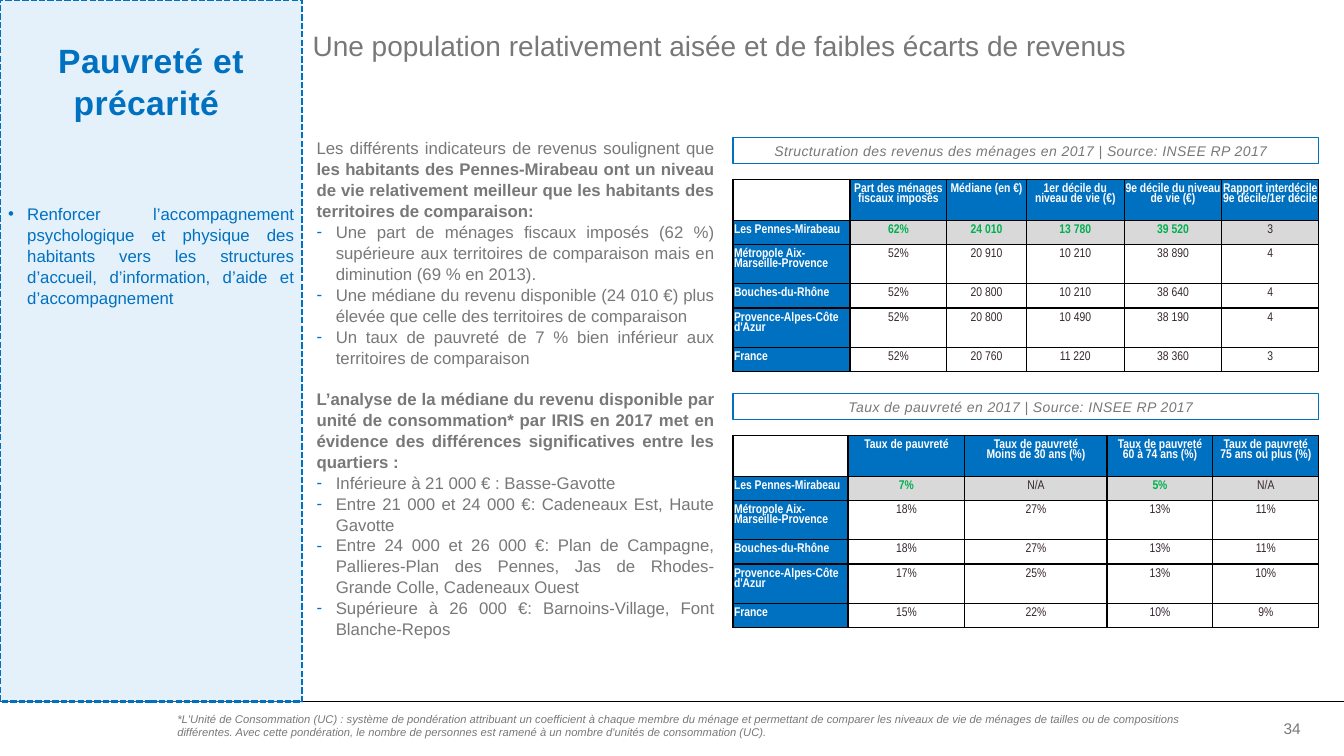
from lxml import etree
from pptx import Presentation
from pptx import util as u
from pptx.dml.color import RGBColor
from pptx.enum import dml, shapes, text
from pptx.oxml import ns

BLUE = RGBColor(0x00, 0x70, 0xC0)
BULLET_BLUE = RGBColor(0x00, 0x70, 0xCD)
PALE_BLUE = RGBColor(0xE4, 0xF1, 0xFB)
GREY = RGBColor(0x77, 0x78, 0x77)
LIGHT_GREY = RGBColor(0xD9, 0xD9, 0xD9)
DARK = RGBColor(0x36, 0x27, 0x31)
GREEN = RGBColor(0x00, 0xB0, 0x50)
WHITE = RGBColor(0xFF, 0xFF, 0xFF)
BLACK = RGBColor(0x00, 0x00, 0x00)
LEFT, CENTER, RIGHT, JUSTIFY = (text.PP_ALIGN.LEFT, text.PP_ALIGN.CENTER,
                                text.PP_ALIGN.RIGHT, text.PP_ALIGN.JUSTIFY)
ROW_HEIGHTS = [0.39, 0.24] * 3
BODY_SPACING = 1.04

INCOME_INTRO = [
    ("Les différents indicateurs de revenus soulignent que ", False),
    ("les habitants des Pennes-Mirabeau ont un niveau de vie relativement meilleur "
     "que les habitants des territoires de comparaison:", True)]
INCOME_POINTS = [
    "Une part de ménages fiscaux imposés (62 %) supérieure aux territoires de "
    "comparaison mais en diminution (69 % en 2013).",
    "Une médiane du revenu disponible (24 010 €) plus élevée que celle des "
    "territoires de comparaison",
    "Un taux de pauvreté de 7 % bien inférieur aux territoires de comparaison"]
DISTRICT_INTRO = [
    ("L’analyse de la médiane du revenu disponible par unité de consommation* par "
     "IRIS en 2017 met en évidence des différences significatives entre les "
     "quartiers :", True)]
DISTRICT_POINTS = [
    "Inférieure à 21 000 € : Basse-Gavotte",
    "Entre 21 000 et 24 000 €: Cadeneaux Est, Haute Gavotte",
    "Entre 24 000 et 26 000 €: Plan de Campagne, Pallieres-Plan des Pennes, "
    "Jas de Rhodes-Grande Colle, Cadeneaux Ouest",
    "Supérieure à 26 000 €: Barnoins-Village, Font Blanche-Repos"]
PANEL_POINT = ("Renforcer l’accompagnement psychologique et physique des habitants vers "
               "les structures d’accueil, d’information, d’aide et d’accompagnement")
FOOTNOTE = ("*L'Unité de Consommation (UC) : système de pondération attribuant un "
            "coefficient à chaque membre du ménage et permettant de comparer les niveaux "
            "de vie de ménages de tailles ou de compositions différentes. Avec cette "
            "pondération, le nombre de personnes est ramené à un nombre d'unités de "
            "consommation (UC).")
INCOME_ROWS = [
    ["", "Part des ménages fiscaux imposés", "Médiane (en €)",
     "1er décile du niveau de vie (€)", "9e décile du niveau de vie (€)",
     "Rapport interdécile 9e décile/1er décile"],
    ["Les Pennes-Mirabeau", "62%", "24 010", "13 780", "39 520", "3"],
    ["Métropole Aix-Marseille-Provence", "52%", "20 910", "10 210", "38 890", "4"],
    ["Bouches-du-Rhône", "52%", "20 800", "10 210", "38 640", "4"],
    ["Provence-Alpes-Côte d'Azur", "52%", "20 800", "10 490", "38 190", "4"],
    ["France", "52%", "20 760", "11 220", "38 360", "3"]]
POVERTY_ROWS = [
    ["", "Taux de pauvreté", "Taux de pauvreté\vMoins de 30 ans (%)",
     "Taux de pauvreté\v60 à 74 ans (%)", "Taux de pauvreté\v75 ans ou plus (%)"],
    ["Les Pennes-Mirabeau", "7%", "N/A", "5%", "N/A"],
    ["Métropole Aix-Marseille-Provence", "18%", "27%", "13%", "11%"],
    ["Bouches-du-Rhône", "18%", "27%", "13%", "11%"],
    ["Provence-Alpes-Côte d'Azur", "17%", "25%", "13%", "10%"],
    ["France", "15%", "22%", "10%", "9%"]]


def inches(*values):
    return [u.Inches(value) for value in values]


def set_frame(frame, insets, anchor=text.MSO_ANCHOR.TOP):
    frame.word_wrap = True
    frame.auto_size = text.MSO_AUTO_SIZE.NONE
    frame.vertical_anchor = anchor
    (frame.margin_left, frame.margin_top,
     frame.margin_right, frame.margin_bottom) = inches(*insets)


def add_run(paragraph, words, size, color, bold=False, italic=False,
            font="Arial", tracking=0):
    for index, line in enumerate(words.split("\v")):
        if index:
            paragraph.add_line_break()
        run = paragraph.add_run()
        run.text = line
        run.font.name, run.font.size = font, u.Pt(size)
        run.font.bold, run.font.italic = bold, italic
        run.font.color.rgb = color
        if tracking:
            run._r.get_or_add_rPr().set("spc", str(tracking))


def add_bullet(paragraph, mark, color):
    properties = paragraph._p.get_or_add_pPr()
    indent = u.Inches(0.19)
    properties.set("marL", str(indent))
    properties.set("indent", str(-indent))
    bullet_color = etree.SubElement(properties, ns.qn("a:buClr"))
    etree.SubElement(bullet_color, ns.qn("a:srgbClr")).set("val", str(color))
    etree.SubElement(properties, ns.qn("a:buFont")).set("typeface", "Arial")
    etree.SubElement(properties, ns.qn("a:buChar")).set("char", mark)


def add_box(slide, box, fill=None, line_width=0.75):
    shape = slide.shapes.add_shape(shapes.MSO_SHAPE.RECTANGLE, *inches(*box))
    shape.shadow.inherit = False
    if fill is None:
        shape.fill.background()
    else:
        shape.fill.solid()
        shape.fill.fore_color.rgb = fill
    shape.line.color.rgb = BLUE
    shape.line.width = u.Pt(line_width)
    return shape


def add_label(slide, box, words, size, alignment, italic=False):
    frame = slide.shapes.add_textbox(*inches(*box)).text_frame
    set_frame(frame, (0.1, 0.05, 0.1, 0.05), text.MSO_ANCHOR.MIDDLE)
    frame.paragraphs[0].alignment = alignment
    add_run(frame.paragraphs[0], words, size, GREY, italic=italic)


def place_title(slide, box):
    title = slide.shapes.title
    title.left, title.top, title.width, title.height = inches(*box)
    set_frame(title.text_frame, (0, 0, 0.1, 0.05))
    paragraph = title.text_frame.paragraphs[0]
    paragraph.alignment, paragraph.line_spacing = LEFT, 0.9
    add_run(paragraph, "Une population relativement aisée et de faibles écarts de revenus",
            20, GREY)


def add_side_panel(slide, box):
    panel = add_box(slide, box, PALE_BLUE, 1.5)
    panel.line.dash_style = dml.MSO_LINE.SQUARE_DOT
    frame = panel.text_frame
    set_frame(frame, (0.08, 0.38, 0.08, 0.08))
    heading = frame.paragraphs[0]
    heading.alignment, heading.line_spacing = CENTER, BODY_SPACING
    add_run(heading, "Pauvreté et précarité ", 24, BLUE, bold=True, tracking=30)
    point = frame.add_paragraph()
    point.alignment, point.line_spacing = JUSTIFY, BODY_SPACING
    point.space_before = u.Pt(58)
    add_bullet(point, "•", BLUE)
    add_run(point, PANEL_POINT, 12, BLUE)


def add_analysis(slide, box):
    frame = slide.shapes.add_textbox(*inches(*box)).text_frame
    set_frame(frame, (0, 0, 0, 0.08))
    sections = [(INCOME_INTRO, INCOME_POINTS), (DISTRICT_INTRO, DISTRICT_POINTS)]
    for index, (intro, points) in enumerate(sections):
        paragraph = frame.add_paragraph() if index else frame.paragraphs[0]
        paragraph.alignment, paragraph.line_spacing = JUSTIFY, BODY_SPACING
        if index:
            paragraph.space_before = u.Pt(14.4)
        for words, bold in intro:
            add_run(paragraph, words, 12, GREY, bold)
        for words in points:
            paragraph = frame.add_paragraph()
            paragraph.alignment, paragraph.line_spacing = JUSTIFY, BODY_SPACING
            add_bullet(paragraph, "-", BULLET_BLUE)
            add_run(paragraph, words, 12, GREY)


def add_borders(cell):
    properties = cell._tc.get_or_add_tcPr()
    for index, side in enumerate(("lnL", "lnR", "lnT", "lnB")):
        border = etree.Element(ns.qn(f"a:{side}"), w=str(u.Pt(1)))
        fill = etree.SubElement(border, ns.qn("a:solidFill"))
        etree.SubElement(fill, ns.qn("a:srgbClr")).set("val", str(BLACK))
        properties.insert(index, border)


def add_captioned_table(slide, box, caption, rows, column_widths, green_columns):
    left, top, width, height = box
    # Caption strip
    strip = add_box(slide, (left, top, width, 0.26))
    set_frame(strip.text_frame, (0, 0.05, 0.1, 0.05))
    strip.text_frame.paragraphs[0].alignment = CENTER
    add_run(strip.text_frame.paragraphs[0], caption, 10, GREY, italic=True, tracking=30)
    # Table
    table = slide.shapes.add_table(len(rows), len(rows[0]),
                                   *inches(left, top + 0.42, width, height - 0.42)).table
    table.first_row = table.horz_banding = False
    for column, column_width in zip(table.columns, column_widths):
        column.width = u.Inches(column_width)
    for r, (values, row_height) in enumerate(zip(rows, ROW_HEIGHTS)):
        table.rows[r].height = u.Inches(row_height)
        for c, value in enumerate(values):
            cell = table.cell(r, c)
            cell.margin_left = cell.margin_right = u.Inches(0.01)
            header = bool(value) and (r == 0 or c == 0)
            green = r == 1 and c in green_columns
            if header or r == 1:
                cell.fill.solid()
                cell.fill.fore_color.rgb = BLUE if header else LIGHT_GREY
            else:
                cell.fill.background()
            add_borders(cell)
            if value:
                paragraph = cell.text_frame.paragraphs[0]
                paragraph.alignment = CENTER if c or r == 0 else LEFT
                paragraph.line_spacing = 0.85
                color = WHITE if header else GREEN if green else DARK
                add_run(paragraph, value, 9, color, header or green, font="Arial Narrow")


def add_footer(slide, box):
    left, top, width, height = box
    rule = slide.shapes.add_connector(shapes.MSO_CONNECTOR.STRAIGHT,
                                      *inches(left, top, left + width, top))
    rule.line.color.rgb, rule.line.width = BLACK, u.Pt(0.75)
    etree.SubElement(rule._element.spPr, ns.qn("a:effectLst"))
    add_label(slide, (left + 1.66, top + 0.1, 10.71, 0.28), FOOTNOTE, 8, LEFT, italic=True)
    add_label(slide, (left + 12.27, top, 0.73, height), "34", 11, RIGHT)


def main():
    presentation = Presentation()
    presentation.slide_width, presentation.slide_height = inches(13.33, 7.5)
    slide = presentation.slides.add_slide(presentation.slide_layouts[5])
    place_title(slide, (3.1, 0.32, 9.82, 0.39))
    add_analysis(slide, (3.14, 1.36, 3.95, 5.65))
    add_captioned_table(slide, (7.27, 1.36, 5.81, 2.31),
                        "Structuration des revenus des ménages en 2017 | Source: INSEE RP 2017",
                        INCOME_ROWS, [1.16, 0.96, 0.79, 0.97, 0.97, 0.96], (1, 2, 3, 4))
    add_captioned_table(slide, (7.27, 3.9, 5.81, 2.31),
                        "Taux de pauvreté en 2017 | Source: INSEE RP 2017",
                        POVERTY_ROWS, [1.14, 1.16, 1.41, 1.05, 1.05], (1, 3))
    add_footer(slide, (0, 6.96, 13.33, 0.53))
    add_side_panel(slide, (0, 0, 3, 6.96))
    presentation.save("out.pptx")


if __name__ == "__main__":
    main()
